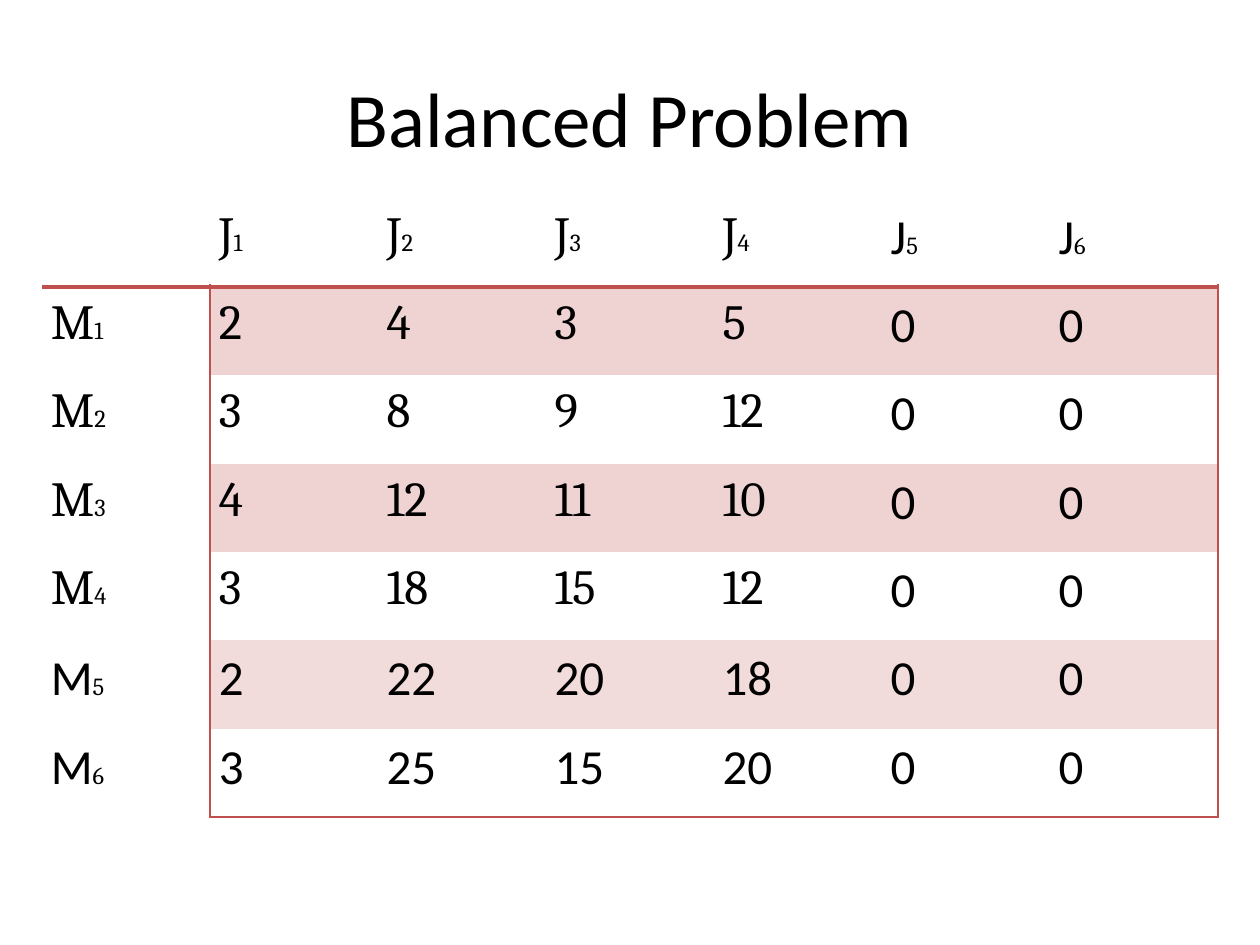
import pptx
import pptx.dml.color
import pptx.enum.text
import pptx.oxml
import pptx.oxml.ns
import pptx.util

COLORS = {
    "text": "000000",
    "paper": "FFFFFF",
    "rule": "C0504D",
    "band": "EFD3D2",
    "light_band": "F2DCDB",
}
SANS, SERIF = "Calibri", "Cambria"
SLIDE_WIDTH, SLIDE_HEIGHT = 10, 7.5
SERIF_SIZE = 4  # the first four machines and jobs are set in the serif font

COSTS = [
    [2, 4, 3, 5, 0, 0],
    [3, 8, 9, 12, 0, 0],
    [4, 12, 11, 10, 0, 0],
    [3, 18, 15, 12, 0, 0],
    [2, 22, 20, 18, 0, 0],
    [3, 25, 15, 20, 0, 0],
]
BAND_FILLS = {1: "band", 3: "band", 5: "light_band"}


def rgb(name):
    return pptx.dml.color.RGBColor.from_string(COLORS[name])


def add_run(paragraph, text, size, font):
    run = paragraph.add_run()
    run.text = text
    run.font.size = pptx.util.Pt(size)
    run.font.name = font
    run.font.bold = False
    run.font.color.rgb = rgb("text")


def add_title(slide, box, text):
    frame = slide.shapes.add_textbox(*map(pptx.util.Inches, box)).text_frame
    frame.word_wrap = True
    frame.vertical_anchor = pptx.enum.text.MSO_ANCHOR.MIDDLE
    paragraph = frame.paragraphs[0]
    paragraph.alignment = pptx.enum.text.PP_ALIGN.CENTER
    add_run(paragraph, text, 44, SANS)


def edge_widths(row, column, last):
    """Border widths in points; a zero means no line."""
    heading, label = row == 0, column == 0
    return {
        "L": 1 if column == 1 and not heading else 0,
        "R": 1 if column in (0, last) and not heading else 0,
        "T": 3 if row == 1 else 0,
        "B": 3 if heading else 1 if row == last and not label else 0,
    }


def set_borders(cell, widths):
    properties = cell._tc.get_or_add_tcPr()
    for side, width in widths.items():
        paint = (
            f'<a:solidFill><a:srgbClr val="{COLORS["rule"]}"/></a:solidFill>'
            if width else "<a:noFill/>"
        )
        properties.append(pptx.oxml.parse_xml(
            f'<a:ln{side} {pptx.oxml.ns.nsdecls("a")} '
            f'w="{pptx.util.Pt(width)}">{paint}</a:ln{side}>'
        ))


def fill_cell(cell, row, column):
    if row == 0 or column == 0:
        fill_name = "paper"
    else:
        fill_name = BAND_FILLS.get(row)
    if fill_name:
        cell.fill.solid()
        cell.fill.fore_color.rgb = rgb(fill_name)
    else:
        cell.fill.background()


def write_cell(cell, row, column):
    cell.margin_left = cell.margin_right = pptx.util.Inches(0.07)
    cell.margin_top = cell.margin_bottom = 0
    if row == column == 0:
        return
    paragraph = cell.text_frame.paragraphs[0]
    paragraph.line_spacing = 1.15
    font = SERIF if max(row, column) <= SERIF_SIZE else SANS
    if row and column:
        add_run(paragraph, str(COSTS[row - 1][column - 1]), 28, font)
    else:
        add_run(paragraph, "M" if row else "J", 28, font)
        add_run(paragraph, str(row or column), 14, SERIF)


def add_cost_table(slide, box):
    """Machines run down the rows, jobs across the columns."""
    count = len(COSTS) + 1
    left, top, width, height = map(pptx.util.Inches, box)
    table = slide.shapes.add_table(count, count, left, top, width, height).table
    table.first_row = table.horz_banding = False
    for row in range(count):
        for column in range(count):
            cell = table.cell(row, column)
            write_cell(cell, row, column)
            set_borders(cell, edge_widths(row, column, count - 1))
            fill_cell(cell, row, column)


def main():
    deck = pptx.Presentation()
    deck.slide_width = pptx.util.Inches(SLIDE_WIDTH)
    deck.slide_height = pptx.util.Inches(SLIDE_HEIGHT)
    slide = deck.slides.add_slide(deck.slide_layouts[6])
    table_width = SLIDE_WIDTH * 14 / 15
    table_left = (SLIDE_WIDTH - table_width) / 2
    add_cost_table(slide, (table_left, SLIDE_HEIGHT * 0.21, table_width, 4.91))
    add_title(slide, (SLIDE_WIDTH * 0.05, SLIDE_HEIGHT * 0.04,
                      SLIDE_WIDTH * 0.9, SLIDE_HEIGHT / 6), "Balanced Problem")
    deck.save("out.pptx")


if __name__ == "__main__":
    main()
